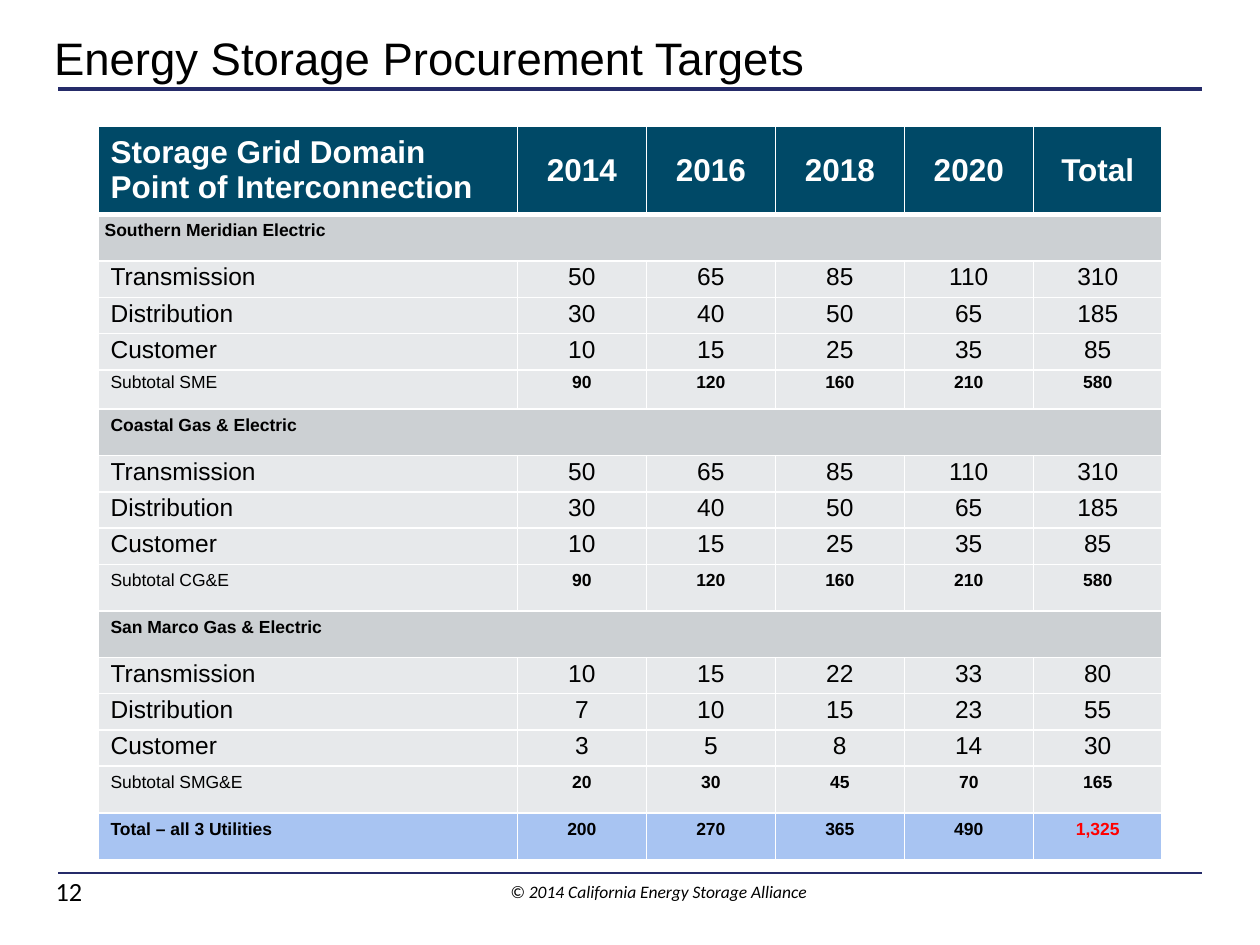
from lxml import etree
from pptx import Presentation
from pptx import util as u
from pptx.dml.color import RGBColor
from pptx.enum import shapes, text
from pptx.oxml import ns

NAVY, TEAL, WHITE, BLACK, RED = "252B69", "004967", "FFFFFF", "000000", "FF0000"
SECTION_GRAY, ROW_GRAY, TOTAL_BLUE = "CCD0D3", "E7E9EB", "A8C4F2"

# Table content
HEADER = ["Storage Grid Domain\nPoint of Interconnection",
          "2014", "2016", "2018", "2020", "Total"]
DOMAINS = ["Transmission", "Distribution", "Customer"]
LARGE_TARGETS = [[50, 65, 85, 110, 310], [30, 40, 50, 65, 185], [10, 15, 25, 35, 85]]
SMALL_TARGETS = [[10, 15, 22, 33, 80], [7, 10, 15, 23, 55], [3, 5, 8, 14, 30]]

# Name, short name, targets, section margin, subtotal margin and height in cm
UTILITIES = [
    ("Southern Meridian Electric", "SME", LARGE_TARGETS, 0.13, 0.05, 0.79),
    ("Coastal Gas & Electric", "CG&E", LARGE_TARGETS, 0.25, 0.13, 0.94),
    ("San Marco Gas & Electric", "SMG&E", SMALL_TARGETS, 0.25, 0.13, 0.94),
]
COLUMN_WIDTHS = [8.45] + [2.6] * 5
HEADER_HEIGHT, TALL_ROW, SHORT_ROW = 1.74, 0.94, 0.73


def color(value):
    return RGBColor.from_string(value)


class SlideBuilder:
    def __init__(self, slide, font="Arial"):
        self.slide = slide
        self.font = font

    def add_text(self, paragraph, content, size, ink=BLACK, bold=False, italic=False,
                 font=None):
        run = paragraph.add_run()
        run.text = content
        run.font.name = font or self.font
        run.font.size = u.Pt(size)
        run.font.bold = bold
        run.font.italic = italic
        run.font.color.rgb = color(ink)

    def rule(self, y, weight):
        line = self.slide.shapes.add_connector(
            shapes.MSO_CONNECTOR.STRAIGHT, u.Cm(1.17), u.Cm(y), u.Cm(24.23), u.Cm(y))
        line.line.color.rgb = color(NAVY)
        line.line.width = u.Pt(weight)
        etree.SubElement(line._element.spPr, ns.qn("a:effectLst"))

    def text_box(self, left, top, width, height, content, size, wrap=True,
                 spacing=None, **style):
        box = self.slide.shapes.add_textbox(u.Cm(left), u.Cm(top), u.Cm(width), u.Cm(height))
        frame = box.text_frame
        frame.margin_left = frame.margin_right = frame.margin_top = frame.margin_bottom = 0
        frame.vertical_anchor = text.MSO_ANCHOR.BOTTOM
        frame.word_wrap = wrap
        paragraph = frame.paragraphs[0]
        if spacing:
            paragraph.line_spacing = spacing
        self.add_text(paragraph, content, size, **style)

    def border(self, cell, side, weight):
        line = etree.SubElement(cell._tc.get_or_add_tcPr(), ns.qn("a:ln" + side),
                                w=str(u.Pt(weight)))
        fill = etree.SubElement(line, ns.qn("a:solidFill"))
        etree.SubElement(fill, ns.qn("a:srgbClr"), val=WHITE)

    def cell(self, cell, content, fill, size, top_weight=1, bottom_weight=1, centered=False,
             side_margin=0.25, margin=0.13, middle=False, **style):
        for side, weight in zip("LRTB", (1, 1, top_weight, bottom_weight)):
            self.border(cell, side, weight)
        cell.fill.solid()
        cell.fill.fore_color.rgb = color(fill)
        cell.margin_left = cell.margin_right = u.Cm(side_margin)
        cell.margin_top = cell.margin_bottom = u.Cm(margin)
        cell.vertical_anchor = text.MSO_ANCHOR.MIDDLE if middle else text.MSO_ANCHOR.TOP
        frame = cell.text_frame
        for index, line in enumerate(content.split("\n") if content else []):
            paragraph = frame.add_paragraph() if index else frame.paragraphs[0]
            if centered:
                paragraph.alignment = text.PP_ALIGN.CENTER
            self.add_text(paragraph, line, size, **style)

    def table(self, left, top, widths, rows):
        heights = [height for height, _, _ in rows]
        table = self.slide.shapes.add_table(
            len(rows), len(widths), u.Cm(left), u.Cm(top),
            u.Cm(sum(widths)), u.Cm(sum(heights))).table
        table.horz_banding = False
        for column, width in zip(table.columns, widths):
            column.width = u.Cm(width)
        for index, (height, values, styles) in enumerate(rows):
            table.rows[index].height = u.Cm(height)
            if len(values) == 1:
                table.cell(index, 0).merge(table.cell(index, len(widths) - 1))
                values = values + [""] * (len(widths) - 1)
            for column, value in enumerate(values):
                style = dict(styles)
                value_bold = style.pop("value_bold", style.get("bold", False))
                last_ink = style.pop("last_ink", style.get("ink", BLACK))
                if column:
                    style["bold"] = value_bold
                if column == len(values) - 1:
                    style["ink"] = last_ink
                self.cell(table.cell(index, column), str(value),
                          centered=column > 0, **style)


def target_rows():
    """Return each row as height, values and cell style."""
    rows = [(HEADER_HEIGHT, HEADER, dict(fill=TEAL, size=18, ink=WHITE, bold=True,
                                         middle=True, bottom_weight=3))]
    grand_total = [0] * 5
    for name, short, targets, side_margin, margin, height in UTILITIES:
        rows.append((TALL_ROW, [name], dict(
            fill=SECTION_GRAY, size=10, bold=True, side_margin=side_margin,
            top_weight=3 if len(rows) == 1 else 1)))
        for domain, values in zip(DOMAINS, targets):
            rows.append((SHORT_ROW, [domain] + values,
                         dict(fill=ROW_GRAY, size=14, margin=0.05)))
        subtotal = [sum(column) for column in zip(*targets)]
        rows.append((height, ["Subtotal " + short] + subtotal, dict(
            fill=ROW_GRAY, size=10, value_bold=True, margin=margin)))
        grand_total = [a + b for a, b in zip(grand_total, subtotal)]
    totals = [f"{value:,}" for value in grand_total]
    rows.append((TALL_ROW, ["Total – all 3 Utilities"] + totals, dict(
        fill=TOTAL_BLUE, size=10, bold=True, last_ink=RED)))
    return rows


def main():
    presentation = Presentation()
    presentation.slide_width, presentation.slide_height = u.Cm(25.4), u.Cm(19.05)
    builder = SlideBuilder(presentation.slides.add_slide(presentation.slide_layouts[6]))

    # Rules and footer
    builder.rule(1.79, 2.25)
    builder.rule(17.6, 0.75)
    builder.text_box(10.29, 17.81, 6.05, 0.38, "© 2014 California Energy Storage Alliance",
                     10, wrap=False, spacing=0.9, italic=True, font="Calibri")

    # Title and page number
    builder.text_box(1.09, 0.38, 23.09, 1.32, "Energy Storage Procurement Targets",
                     26, spacing=u.Pt(21.1))
    builder.text_box(1.12, 17.86, 1.24, 0.43, "12", 15, font="Calibri")

    # Procurement targets
    builder.table(1.98, 2.54, COLUMN_WIDTHS, target_rows())
    presentation.save("out.pptx")


if __name__ == "__main__":
    main()
